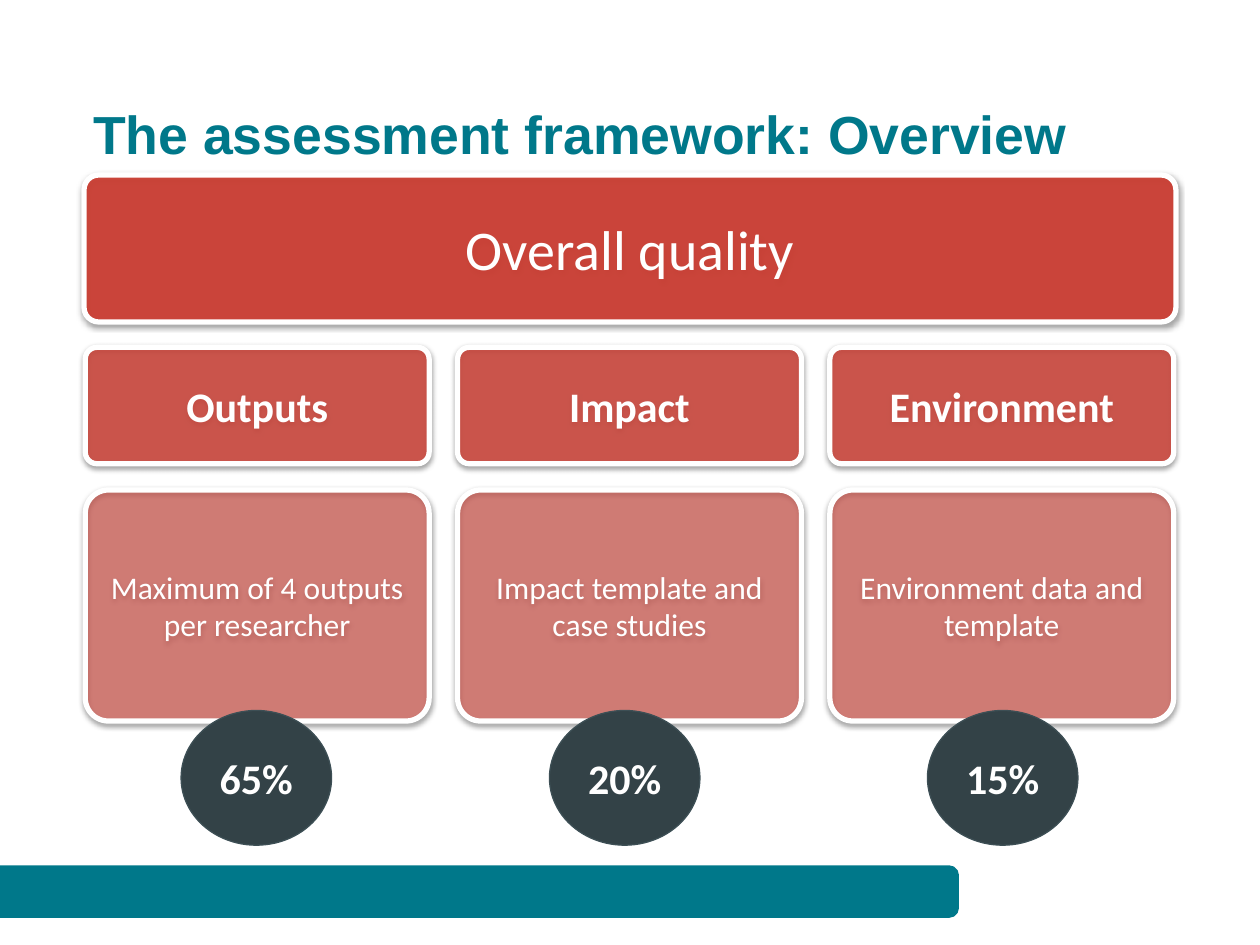
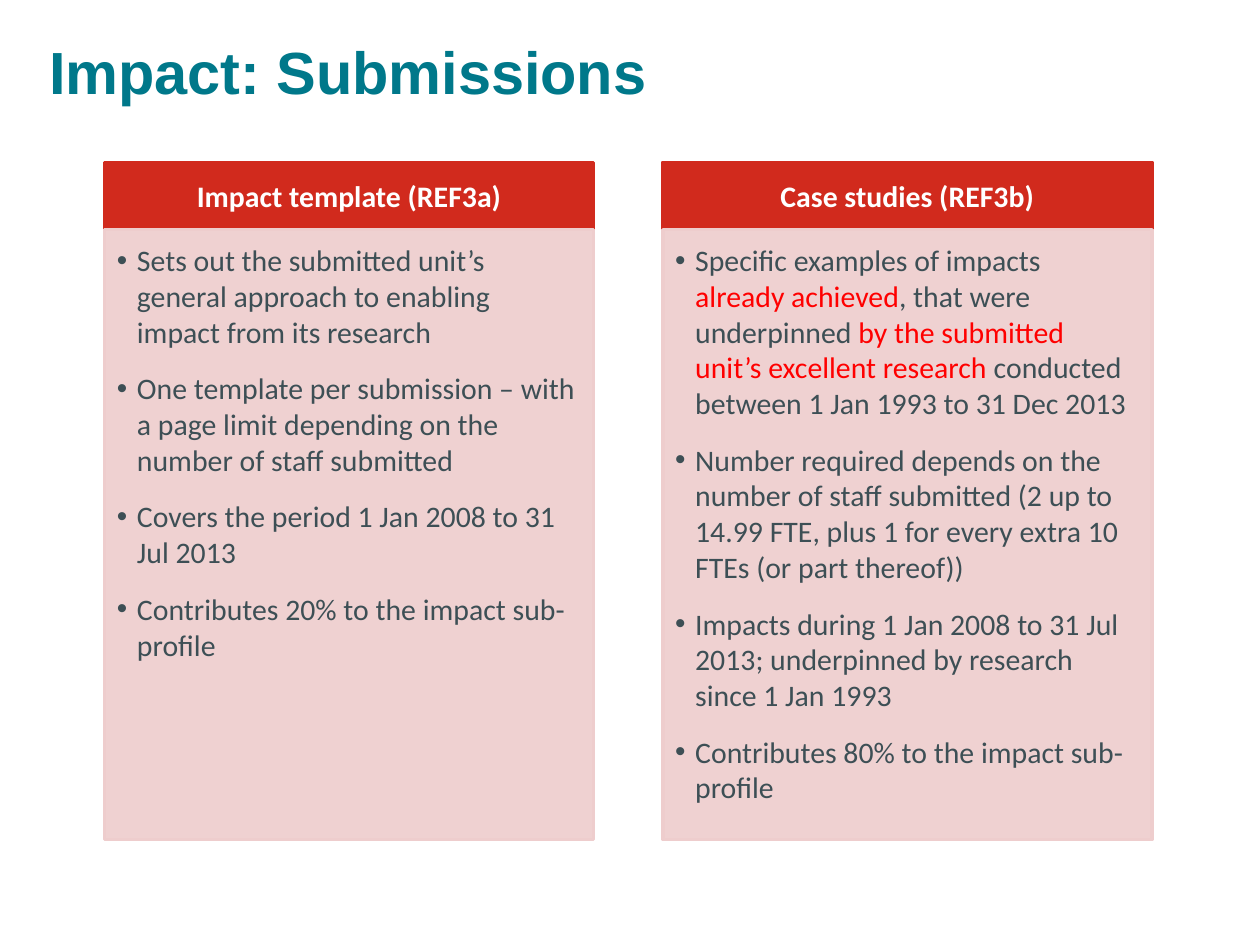
from lxml.etree import SubElement
from pptx import Presentation
from pptx.dml.color import RGBColor
from pptx.enum.shapes import MSO_SHAPE
from pptx.enum.text import MSO_ANCHOR, MSO_AUTO_SIZE, PP_ALIGN
from pptx.oxml.ns import qn
from pptx.util import Pt

TEAL, RED, PINK, SLATE, WHITE = "00788A", "D12A1D", "EECDCD", "3D4F55", "FFFFFF"
DARK, BRIGHT = "334247", "FF0000"


def color(code):
    return RGBColor.from_string(code)


def apply(target, values):
    for name, value in values.items():
        setattr(target, name, value)


class Deck:
    HEAD = {"name": "Arial", "bold": True}
    BODY = {"name": "Calibri", "bold": False}
    BOLD = {"name": "Calibri", "bold": True}
    CENTER = {"alignment": PP_ALIGN.CENTER, "space_before": Pt(0)}
    LEFT = {"alignment": PP_ALIGN.LEFT, "space_before": Pt(0)}
    INSET = (7.2, 3.6, 7.2, 3.6)

    def __init__(self):
        self.show = Presentation()
        apply(self.show, {"slide_width": Pt(720), "slide_height": Pt(540)})
        self.slide = None

    def page(self, layout):
        self.slide = self.show.slides.add_slide(self.show.slide_layouts[layout])

    def place(self, shape, box):
        apply(shape, dict(zip(("left", "top", "width", "height"), map(Pt, box))))

    def paint(self, shape, fill, line, width, alpha=100):
        shape.fill.solid()
        shape.fill.fore_color.rgb = color(fill)
        shape.line.color.rgb = color(line)
        shape.line.width = Pt(width)
        shape.shadow.inherit = False
        if alpha < 100:
            tint = shape._element.spPr.find(qn("a:solidFill"))[0]
            SubElement(tint, qn("a:alpha"), val=str(alpha * 1000))

    def shade(self, shape):
        effects = shape._element.spPr.find(qn("a:effectLst"))
        drop = SubElement(effects, qn("a:outerShdw"), blurRad=str(Pt(3.1)),
                          dist=str(Pt(1.6)), dir="5400000", rotWithShape="0")
        black = SubElement(drop, qn("a:srgbClr"), val="000000")
        SubElement(black, qn("a:alpha"), val="38000")

    def frame(self, shape, anchor, pads, wrap=True):
        names = ("margin_left", "margin_top", "margin_right", "margin_bottom")
        frame = shape.text_frame
        apply(frame, {"word_wrap": wrap, "auto_size": MSO_AUTO_SIZE.NONE,
                      "vertical_anchor": anchor})
        apply(frame, dict(zip(names, map(Pt, pads))))
        return frame

    def words(self, par, text, size, tone, font, form):
        apply(par, form)
        for spot, piece in enumerate(text.split("|")):
            run = par.add_run()
            run.text = piece
            apply(run.font, {**font, "size": Pt(size)})
            run.font.color.rgb = color(BRIGHT if spot % 2 else tone)

    def title(self, text, box, size, anchor, pads):
        shape = self.slide.shapes.title
        self.place(shape, box)
        par = self.frame(shape, anchor, pads).paragraphs[0]
        self.words(par, text, size, TEAL, self.HEAD, {**self.LEFT, "line_spacing": Pt(38)})

    def label(self, shape, text, size, font, pads, wrap=True):
        par = self.frame(shape, MSO_ANCHOR.MIDDLE, pads, wrap).paragraphs[0]
        self.words(par, text, size, WHITE, font, self.CENTER)

    def block(self, kind, box):
        return self.slide.shapes.add_shape(kind, *map(Pt, box))

    def card(self, text, box, size, font, alpha, pad):
        shape = self.block(MSO_SHAPE.ROUNDED_RECTANGLE, box)
        shape.adjustments[0] = 0.1
        self.paint(shape, RED, WHITE, 3, alpha)
        self.shade(shape)
        self.label(shape, text, size, font, [pad] * 4)

    def bar(self, box):
        self.paint(self.block(MSO_SHAPE.ROUNDED_RECTANGLE, box), TEAL, TEAL, 2)

    def badge(self, text, box):
        shape = self.block(MSO_SHAPE.OVAL, box)
        self.paint(shape, DARK, SLATE, 0.75)
        self.label(shape, text, 24, self.BOLD, self.INSET, False)

    def header(self, spot, text, box):
        shape = self.slide.placeholders[spot]
        self.place(shape, box)
        self.paint(shape, RED, RED, 2)
        self.label(shape, text, 17, self.BOLD, (9, 5.5, 9, 5.5))

    def bullets(self, spot, items, box):
        shape = self.slide.placeholders[spot]
        self.place(shape, box)
        self.paint(shape, PINK, PINK, 2, 90)
        frame = self.frame(shape, MSO_ANCHOR.TOP, (7, 7, 9, 11))
        for row, text in enumerate(items):
            par = frame.add_paragraph() if row else frame.paragraphs[0]
            props = par._p.get_or_add_pPr()
            props.set("marL", str(Pt(11.5)))
            props.set("indent", str(Pt(-11.5)))
            SubElement(props, qn("a:buFont"), typeface="Arial")
            SubElement(props, qn("a:buChar"), char="•")
            self.words(par, text, 17, SLATE, self.BODY, {**self.LEFT, "space_after": Pt(12)})


def overview(deck):
    deck.page(5)
    deck.title("The assessment framework: Overview", (46, 43, 623.5, 65), 30.6,
               MSO_ANCHOR.MIDDLE, deck.INSET)
    deck.card("Overall quality", (48, 100, 624, 84), 32, deck.BODY, 80, 9)
    parts = (
        ("Outputs", "Maximum of 4 outputs per researcher", "65%", 103.5),
        ("Impact", "Impact template and case studies", "20%", 314),
        ("Environment", "Environment data and template", "15%", 530),
    )
    for col, (name, detail, share, left) in enumerate(parts):
        edge = 48.75 + 212.75 * col
        deck.card(name, (edge, 198.5, 196.5, 66.5), 24, deck.BOLD, 70, 7)
        deck.card(detail, (edge, 280, 196.5, 132), 18, deck.BODY, 50, 5)
        deck.badge(share, (left, 406, 86, 77))
    deck.bar((-6.5, 495.5, 553.5, 28))


def submissions(deck):
    deck.page(4)
    deck.title("Impact: Submissions", (28, 22.5, 538.5, 65), 34, MSO_ANCHOR.TOP, [0] * 4)
    panels = (
        ("Impact template (REF3a)", (
            "Sets out the submitted unit’s general approach to enabling impact from its research",
            "One template per submission – with a page limit depending on the number of staff submitted",
            "Covers the period 1 Jan 2008 to 31 Jul 2013",
            "Contributes 20% to the impact sub-profile")),
        ("Case studies (REF3b)", (
            "Specific examples of impacts |already achieved|, that were underpinned "
            "|by the submitted unit’s excellent research |conducted between 1 Jan 1993 to 31 Dec 2013",
            "Number required depends on the number of staff submitted "
            "(2 up to 14.99 FTE, plus 1 for every extra 10 FTEs (or part thereof))",
            "Impacts during 1 Jan 2008 to 31 Jul 2013; underpinned by research since 1 Jan 1993",
            "Contributes 80% to the impact sub-profile")),
    )
    for col, (name, items) in enumerate(panels):
        edge = 59.75 + 319 * col
        deck.header(1 + 2 * col, name, (edge, 92.75, 279.5, 38.5))
        deck.bullets(2 + 2 * col, items, (edge, 131.25, 279.5, 348.5))


def main():
    deck = Deck()
    overview(deck)
    submissions(deck)
    deck.show.save("out.pptx")


if __name__ == "__main__":
    main()
